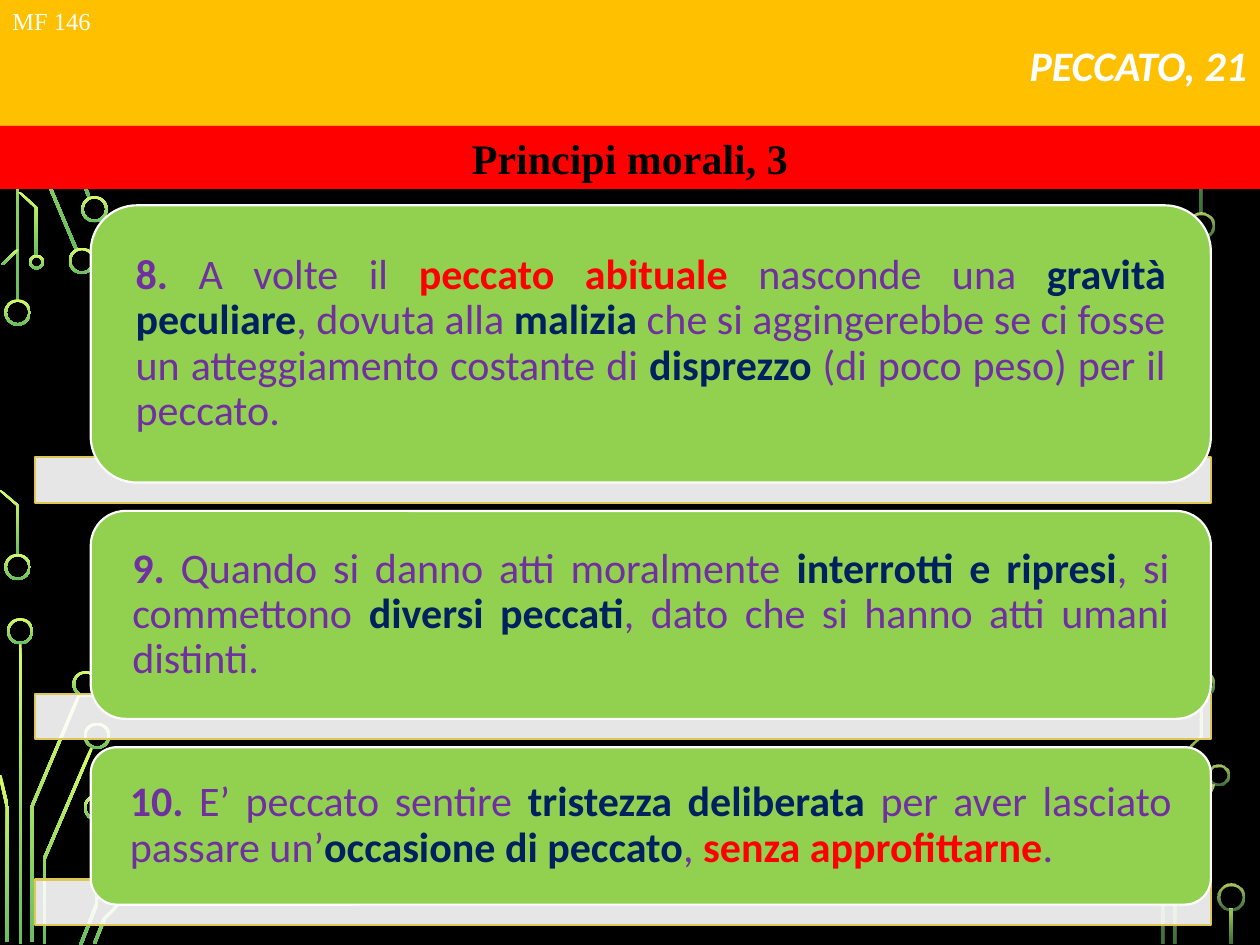
from lxml.etree import SubElement
from pptx import Presentation
from pptx.dml.color import RGBColor
from pptx.enum.shapes import MSO_SHAPE as SHAPE
from pptx.enum.text import MSO_ANCHOR as ANCHOR, MSO_AUTO_SIZE as AUTO, PP_ALIGN as ALIGN
from pptx.oxml.ns import qn
from pptx.util import Inches, Pt

COLS, ROWS = 10, 7.5  # one grid cell is an inch square
COLORS = {"bg": "000000", "title": "FFC000", "banner": "FF0000", "card": "92D050",
          "white": "FFFFFF", "gold": "DDC855", "text": "7030A0", "navy": "002060",
          "red": "FF0000", "black": "000000", "lime": "D8FC68", "green": "66BD5F"}
SANS, SERIF = "Calibri", "Times New Roman"

RING, TRACE = 0.21, 0.025  # usual ring diameter, trace width
# Rings: centre x, centre y, diameter. Traces: centre line points.
LEFT_RINGS = [(0.14, 2.48, RING), (0.14, 4.5, RING), (0.65, 2.07, RING), (0.75, 1.66, RING),
              (0.75, 1.09, RING), (0.29, 2.08, 0.12), (0.16, 5.01, RING), (0.68, 5.43, RING),
              (0.77, 5.84, RING), (0.77, 6.41, RING)]
LEFT_TRACES = [
    [(0.14, 0.01), (0.14, 2.39)],
    [(0.23, 0.01), (0.23, 1.09), (0.61, 1.99)],
    [(0.33, 0.01), (0.33, 0.67), (0.71, 1.57)],
    [(0.61, 0), (0.75, 0.33), (0.75, 1)],
    [(0.72, 0), (0.8, 0.2), (1.16, 0.57)],
    [(0.14, 1.98), (0.02, 2.1)],
    [(0, 3.89), (0.14, 4.01), (0.14, 4.41)],
    [(0.15, 1.52), (0.29, 1.65), (0.29, 2.03)],
    [(0.16, 5.1), (0.16, 7.49)],
    [(0.63, 5.51), (0.25, 6.41), (0.25, 7.48)],
    [(0, 6.15), (0.06, 6.41), (0.06, 7.48)],
    [(0.73, 5.93), (0.35, 6.82), (0.35, 7.49)],
    [(0.77, 6.5), (0.77, 7.17), (0.64, 7.5)],
    [(1.18, 6.93), (0.83, 7.29), (0.75, 7.49)],
]
RIGHT_RINGS = [(9.53, 1.79, RING), (9.67, 6.15, 0.17), (9.53, 5.43, RING), (9.77, 7.12, RING)]
RIGHT_TRACES = [
    [(9.71, 0), (9.63, 0.2), (9.28, 0.56)],
    [(9.63, 6.23), (9.33, 6.93), (9.33, 7.49)],
    [(9.84, 0.01), (9.84, 1.08), (9.53, 1.39), (9.53, 1.69)],
    [(9.53, 5.52), (9.53, 5.84), (9.23, 6.14), (9.23, 7.49)],
    [(9.77, 7.21), (9.77, 7.49)],
]

# Each card: height, then its runs as text and colour; only "text" runs are not bold.
CARDS = [
    (2.2, [("8.", "number"), (" A volte il ", "text"), ("peccato abituale ", "red"),
           ("nasconde una ", "text"), ("gravità peculiare", "navy"),
           (", dovuta alla ", "text"), ("malizia", "navy"),
           (" che si aggingerebbe se ci fosse un atteggiamento costante di ", "text"),
           ("disprezzo", "navy"), (" (di poco peso) per il peccato.", "text")]),
    (1.65, [("9.", "number"), (" Quando si danno atti moralmente ", "text"),
            ("interrotti e ripresi", "navy"), (", si commettono ", "text"),
            ("diversi peccati", "navy"),
            (", dato che si hanno atti umani distinti.", "text")]),
    (1.25, [("10.", "number"), (" E’ peccato sentire ", "text"),
            ("tristezza deliberata ", "navy"), ("per aver lasciato passare un’", "text"),
            ("occasione di peccato", "navy"), (", ", "text"),
            ("senza approfittarne", "red"), (".", "text")]),
]


def rgb(name):
    return RGBColor.from_string(COLORS[name])


def cells(*lengths):
    return [Inches(v) for v in lengths]


def set_alpha(fill_color, percent):
    SubElement(fill_color, qn("a:alpha")).set("val", str(percent * 1000))


def add_box(s, kind, at, fill, line=None):
    sp = s.shapes.add_shape(kind, *cells(*at))
    sp.shadow.inherit = False
    sp.fill.solid()
    sp.fill.fore_color.rgb = rgb(fill)
    if line:
        sp.line.color.rgb = rgb(line)
        sp.line.width = Pt(1.25)
    else:
        sp.line.fill.background()
    return sp


def write_line(tf, text, size, font, color, align, bold=False, italic=False):
    p = tf.paragraphs[0]
    p.text = text
    p.alignment = align
    f = p.font
    f.size, f.name, f.bold, f.italic = Pt(size), font, bold, italic
    f.color.rgb = rgb(color)
    return p


def style_circuit(sp, alphas):
    """Fill with the vertical lime to green gradient, see-through if alphas are given."""
    sp.shadow.inherit = False
    sp.line.fill.background()
    sp.fill.gradient()
    sp.fill.gradient_angle = 270
    for stop, name, position in zip(sp.fill.gradient_stops, ("lime", "green"), (0, 1)):
        stop.color.rgb = rgb(name)
        stop.position = position
    if alphas:
        for color, alpha in zip(sp._element.spPr.iter(qn("a:srgbClr")), alphas):
            set_alpha(color, alpha)


def add_ring(s, x, y, size, alphas):
    sp = s.shapes.add_shape(SHAPE.DONUT, *cells(x - size / 2, y - size / 2, size, size))
    sp.adjustments[0] = 0.02 / size
    style_circuit(sp, alphas)


def add_trace(s, points, alphas):
    """Widen a centre line sideways into a closed ribbon."""
    half = TRACE / 2
    outline = [cells(x - half, y) for x, y in points]
    outline += [cells(x + half, y) for x, y in reversed(points)]
    builder = s.shapes.build_freeform(*outline[0])
    builder.add_line_segments(outline[1:], close=True)
    style_circuit(builder.convert_to_shape(), alphas)


def add_circuit(s, rings, traces, alphas=None):
    for points in traces:
        add_trace(s, points, alphas)
    for ring in rings:
        add_ring(s, *ring, alphas)


def add_title(s, text):
    title = s.shapes.title
    s.shapes._spTree.append(title._element)  # in front of the circuit
    title.left, title.top, title.width, title.height = cells(0, 0, COLS, 1.08)
    title.fill.solid()
    title.fill.fore_color.rgb = rgb("title")
    tf = title.text_frame
    tf.auto_size = AUTO.NONE
    tf.vertical_anchor = ANCHOR.MIDDLE
    p = write_line(tf, text, 24, SANS, "white", ALIGN.RIGHT, bold=True, italic=True)
    p.line_spacing = 0.9


def add_banner(s, text):
    tf = add_box(s, SHAPE.RECTANGLE, (0, 1, COLS, 0.5), "banner").text_frame
    tf.vertical_anchor = ANCHOR.MIDDLE
    write_line(tf, text, 24, SERIF, "black", ALIGN.CENTER, bold=True)


def add_card(s, top, height, runs):
    bar = add_box(s, SHAPE.RECTANGLE, (0.28, top + height - 0.2, 9.33, 0.36), "white", "gold")
    set_alpha(bar._element.spPr.find(qn("a:solidFill"))[0], 90)
    card = add_box(s, SHAPE.ROUNDED_RECTANGLE, (0.72, top, 8.89, height), "card", "white")
    tf = card.text_frame
    tf.word_wrap = True
    tf.vertical_anchor = ANCHOR.MIDDLE
    tf.margin_left = tf.margin_right = Inches(0.25)
    tf.margin_top = tf.margin_bottom = 0
    p = tf.paragraphs[0]
    p.alignment, p.line_spacing = ALIGN.JUSTIFY, 0.9
    p.font.size, p.font.name = Pt(24), SANS
    for text, style in runs:
        r = p.add_run()
        r.text = text
        r.font.bold = style != "text"
        r.font.color.rgb = rgb("text" if style == "number" else style)


def add_cards(s, top=1.63, gap=0.225):
    for height, runs in CARDS:
        add_card(s, top, height, runs)
        top += height + gap


def add_page_mark(s, text):
    tf = s.shapes.add_textbox(*cells(0, 0, 0.83, 0.34)).text_frame
    tf.word_wrap = False
    write_line(tf, text, 14, SERIF, "white", ALIGN.LEFT)


def main():
    prs = Presentation()
    prs.slide_width, prs.slide_height = cells(COLS, ROWS)
    s = prs.slides.add_slide(prs.slide_layouts[5])
    s.background.fill.solid()
    s.background.fill.fore_color.rgb = rgb("bg")
    add_circuit(s, LEFT_RINGS, LEFT_TRACES)
    add_circuit(s, RIGHT_RINGS, RIGHT_TRACES, alphas=(80, 60))
    add_title(s, "PECCATO, 21")
    add_banner(s, "Principi morali, 3")
    add_cards(s)
    add_page_mark(s, "MF 146")
    prs.save("out.pptx")


if __name__ == "__main__":
    main()
